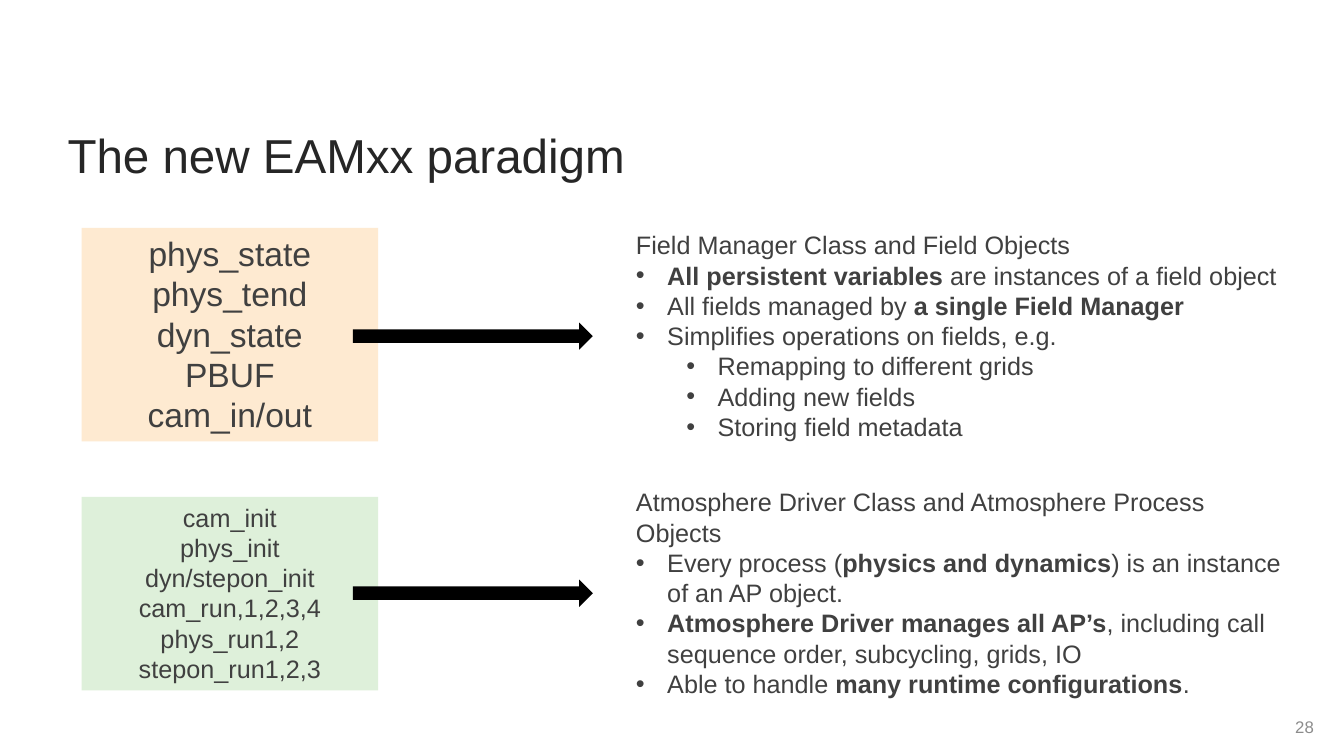
"""Build the slide on the new EAMxx paradigm."""
import pptx
import pptx.dml.color
import pptx.enum.shapes
import pptx.enum.text
import pptx.util
from lxml import etree

Inches = pptx.util.Inches
Pt = pptx.util.Pt
RGBColor = pptx.dml.color.RGBColor
ALIGN = pptx.enum.text.PP_ALIGN
ANCHOR = pptx.enum.text.MSO_ANCHOR
SHAPE = pptx.enum.shapes.MSO_SHAPE

INK = RGBColor(0x26, 0x26, 0x26)
BODY = RGBColor(0x40, 0x40, 0x40)
GREY = RGBColor(0x8C, 0x8C, 0x8C)
BLACK = RGBColor(0, 0, 0)
ORANGE = RGBColor(0xFE, 0xEA, 0xD1)
GREEN = RGBColor(0xDE, 0xF0, 0xDA)

TITLE = "The new EAMxx paradigm"
PAGE = "28"
# Bold passages stand between asterisks; each line is (bullet level, text).
ROWS = [
    {
        "fill": ORANGE, "size": 24, "box": (2.26, 2.12), "top": 2.23,
        "old": ["phys_state", "phys_tend", "dyn_state", "PBUF", "cam_in/out"],
        "new": [
            (0, "Field Manager Class and Field Objects"),
            (1, "*All persistent variables* are instances of a field object"),
            (1, "All fields managed by *a single Field Manager*"),
            (1, "Simplifies operations on fields, e.g."),
            (2, "Remapping to different grids"),
            (2, "Adding new fields"),
            (2, "Storing field metadata"),
        ],
    },
    {
        "fill": GREEN, "size": 18, "box": (4.93, 1.92), "top": 4.78,
        "old": ["cam_init", "phys_init", "dyn/stepon_init", "cam_run,1,2,3,4",
                "phys_run1,2", "stepon_run1,2,3"],
        "new": [
            (0, "Atmosphere Driver Class and Atmosphere Process Objects"),
            (1, "Every process (*physics and dynamics*) is an instance of an AP object."),
            (1, "*Atmosphere Driver manages all AP’s*, including call sequence order, "
                "subcycling, grids, IO"),
            (1, "Able to handle *many runtime configurations*."),
        ],
    },
]
BOX_LEFT, BOX_W = 0.81, 2.94
ARROW_LEFT, ARROW_W, ARROW_H, ARROW_DROP = 3.5, 2.38, 0.27, 0.97
NOTE_LEFT, NOTE_W, NOTE_H = 6.21, 6.6, 2.22
HANG, LEVEL_STEP = 0.31, 0.5


def add_bullet(p, level):
    pPr = p._p.get_or_add_pPr()
    pPr.set("marL", str(Inches(HANG + LEVEL_STEP * (level - 1))))
    pPr.set("indent", str(-Inches(HANG)))
    ns = "{http://schemas.openxmlformats.org/drawingml/2006/main}"
    etree.SubElement(pPr, ns + "buFont").set("typeface", "Arial")
    etree.SubElement(pPr, ns + "buChar").set("char", "•")
    p.level = level - 1


def write(sp, lines, size, color, align=ALIGN.LEFT, anchor=ANCHOR.TOP):
    tf = sp.text_frame
    tf.word_wrap = True
    tf.vertical_anchor = anchor
    for i, (level, text) in enumerate(lines):
        p = tf.add_paragraph() if i else tf.paragraphs[0]
        p.alignment = align
        if level:
            add_bullet(p, level)
        for j, part in enumerate(text.split("*")):
            if part:
                r = p.add_run()
                r.text = part
                r.font.name = "Arial"
                r.font.size = Pt(size)
                r.font.bold = j % 2 == 1
                r.font.color.rgb = color
    return tf


def add_text(s, left, top, width, height):
    return s.shapes.add_textbox(Inches(left), Inches(top), Inches(width), Inches(height))


def add_filled(s, kind, left, top, width, height, fill):
    sp = s.shapes.add_shape(kind, Inches(left), Inches(top), Inches(width), Inches(height))
    sp.shadow.inherit = False
    sp.fill.solid()
    sp.fill.fore_color.rgb = fill
    sp.line.fill.background()
    return sp


def main():
    prs = pptx.Presentation()
    prs.slide_width, prs.slide_height = Inches(13.33), Inches(7.5)
    s = prs.slides.add_slide(prs.slide_layouts[6])

    tf = write(add_text(s, 0.67, 1.26, 12, 1), [(0, TITLE)], 34, INK)
    tf.margin_left = tf.margin_right = 0
    tf.paragraphs[0].line_spacing = 0.9
    write(add_text(s, 10.13, 7.01, 3, 0.4), [(0, PAGE)], 12, GREY, ALIGN.RIGHT, ANCHOR.MIDDLE)

    for row in ROWS:
        top, height = row["box"]
        box = add_filled(s, SHAPE.RECTANGLE, BOX_LEFT, top, BOX_W, height, row["fill"])
        write(box, [(0, name) for name in row["old"]], row["size"], BODY, ALIGN.CENTER)
        add_filled(s, SHAPE.RIGHT_ARROW, ARROW_LEFT, row["top"] + ARROW_DROP,
                   ARROW_W, ARROW_H, BLACK)
        write(add_text(s, NOTE_LEFT, row["top"], NOTE_W, NOTE_H), row["new"], 18, BODY)

    prs.save("out.pptx")


if __name__ == "__main__":
    main()
